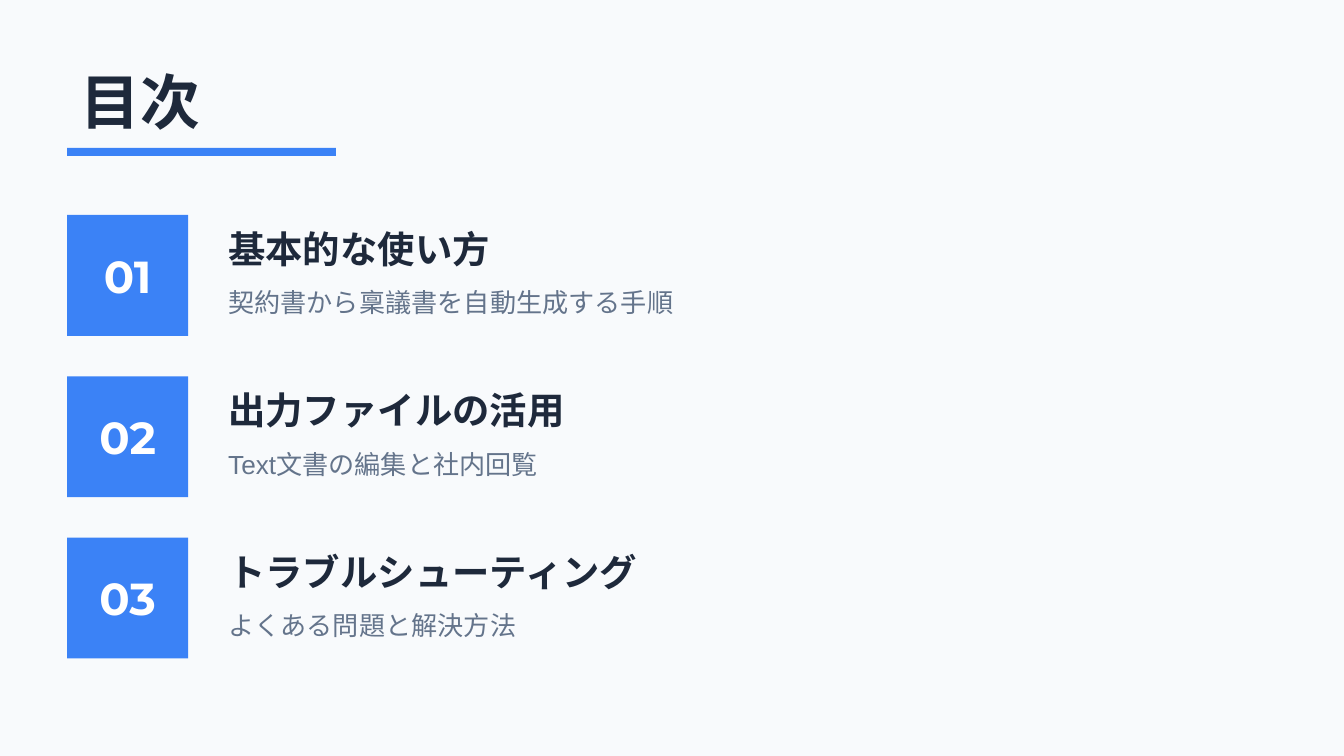
import pptx
import pptx.dml.color
import pptx.enum.shapes
import pptx.enum.text
import pptx.util

INK, BLUE, GRAY, WHITE, PAPER = "1E293B", "3B82F6", "64748B", "FFFFFF", "F8FAFC"
WIDTH = 10
HEIGHT = WIDTH * 9 / 16
MARGIN = 0.05 * WIDTH
ITEM_TOP, ITEM_PITCH, ITEM_SIZE = 1.6, 1.2, 0.9
ITEMS = [
    ("基本的な使い方", "契約書から稟議書を自動生成する手順"),
    ("出力ファイルの活用", "Text文書の編集と社内回覧"),
    ("トラブルシューティング", "よくある問題と解決方法"),
]


def paint(fill, color):
    """Make a fill solid in a hex colour."""
    fill.solid()
    fill.fore_color.rgb = pptx.dml.color.RGBColor.from_string(color)


def inches(box):
    """Convert a left, top, width, height box to lengths."""
    return [pptx.util.Inches(v) for v in box]


def add_text(s, box, text, size, color=INK, font="Arial", bold=True, align="LEFT"):
    """Add one line of formatted text, centred vertically in its box."""
    tf = s.shapes.add_textbox(*inches(box)).text_frame
    tf.word_wrap = True
    tf.vertical_anchor = pptx.enum.text.MSO_ANCHOR.MIDDLE
    p = tf.paragraphs[0]
    p.alignment = pptx.enum.text.PP_ALIGN[align]
    r = p.add_run()
    r.text = text
    r.font.size = pptx.util.Pt(size)
    r.font.name = font
    r.font.bold = bold
    paint(r.font.fill, color)


def add_block(s, box):
    """Add a flat blue rectangle."""
    sp = s.shapes.add_shape(pptx.enum.shapes.MSO_SHAPE.RECTANGLE, *inches(box))
    sp.shadow.inherit = False
    paint(sp.fill, BLUE)
    sp.line.fill.background()


def add_heading(s, box, text):
    """Add the slide title with its underline."""
    x, y, w, h = box
    add_text(s, box, text, 32, font="Montserrat")
    add_block(s, (x, y + h, 0.2 * WIDTH, 0.06))


def add_item(s, box, number, title, detail):
    """Add a numbered square with a title and a detail line beside it."""
    x, y, w, h = box
    square = (x, y, h, h)
    text_x, text_w = x + h + 0.2, w - h - 0.2
    add_block(s, square)
    add_text(s, square, f"{number:02}", 24, color=WHITE, font="Montserrat", align="CENTER")
    add_text(s, (text_x, y, text_w, 0.5), title, 20)
    add_text(s, (text_x, y + h / 2, text_w, 0.4), detail, 14, color=GRAY, bold=False)


def main():
    """Build the contents slide."""
    prs = pptx.Presentation()
    prs.slide_width = pptx.util.Inches(WIDTH)
    prs.slide_height = pptx.util.Inches(HEIGHT)
    s = prs.slides.add_slide(prs.slide_layouts[6])
    paint(s.background.fill, PAPER)
    add_heading(s, (MARGIN, 0.4, WIDTH - 2 * MARGIN, 0.7), "目次")
    for i, (title, detail) in enumerate(ITEMS):
        box = (MARGIN, ITEM_TOP + i * ITEM_PITCH, 8.1, ITEM_SIZE)
        add_item(s, box, i + 1, title, detail)
    prs.save("out.pptx")


if __name__ == "__main__":
    main()
